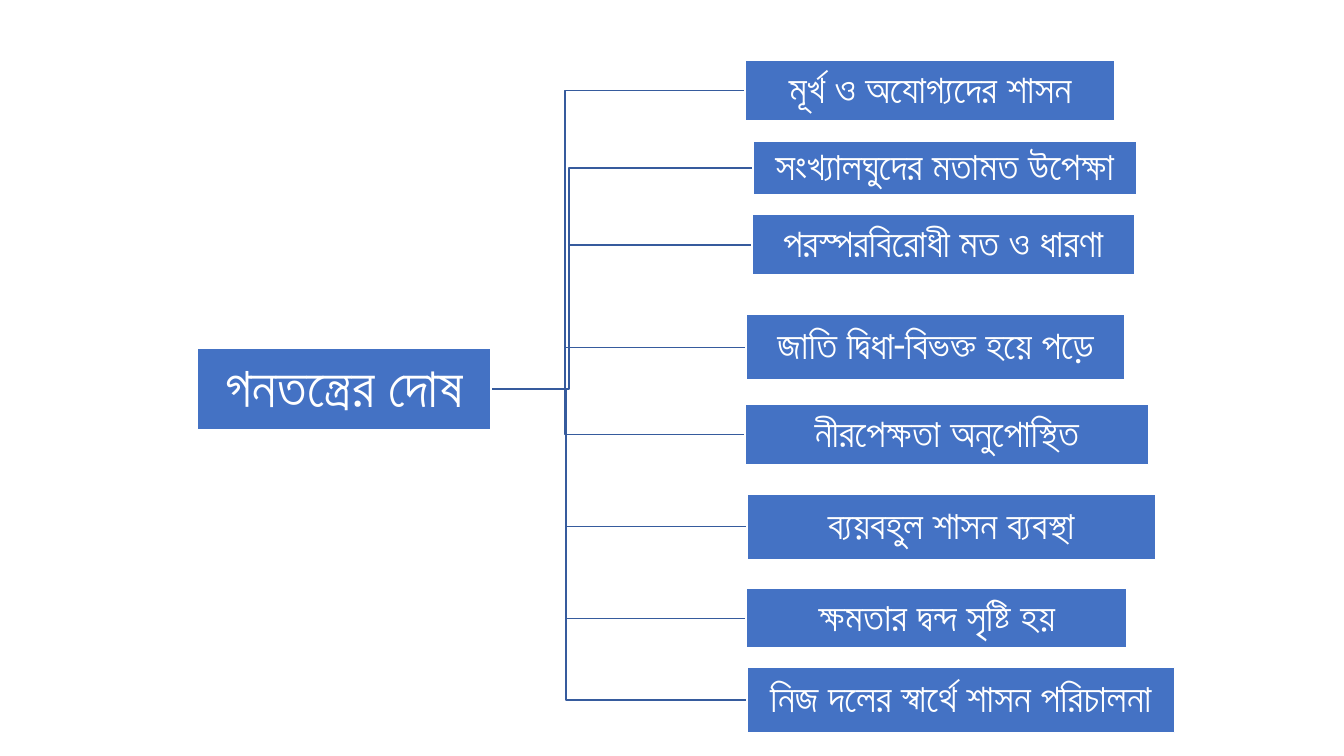
from lxml import etree
from pptx import Presentation
from pptx.dml.color import RGBColor
from pptx.enum import shapes, text
from pptx.oxml import ns
from pptx.util import Inches, Pt

FONT = "Roboto"
BLUE, DARK_BLUE, WHITE = "4472C4", "365B9D", "FFFFFF"
TRUNK_X, TRUNK_Y = 3.82, 3.86

# label, left, top, width, height
FAULTS = [
    ("মূর্খ ও অযোগ্যদের শাসন", 7.39, 0.6, 3.67, 0.6),
    ("সংখ্যালঘুদের মতামত উপেক্ষা", 7.47, 1.4, 3.8, 0.53),
    ("পরস্পরবিরোধী মত ও ধারণা", 7.46, 2.13, 3.79, 0.6),
    ("জাতি দ্বিধা-বিভক্ত হয়ে পড়ে", 7.4, 3.12, 3.76, 0.65),
    ("নীরপেক্ষতা অনুপোস্থিত", 7.39, 4.01, 4, 0.6),
    ("ব্যয়বহুল শাসন ব্যবস্থা", 7.41, 4.9, 4.05, 0.65),
    ("ক্ষমতার দ্বন্দ সৃষ্টি হয়", 7.4, 5.84, 3.78, 0.59),
    ("নিজ দলের স্বার্থে শাসন পরিচালনা", 7.41, 6.62, 4.24, 0.65),
]


def paint(shape, line, fill=None):
    shape.shadow.inherit = False
    if fill:
        shape.fill.solid()
        shape.fill.fore_color.rgb = RGBColor.from_string(fill)
    else:
        shape.fill.background()
    shape.line.color.rgb = RGBColor.from_string(line)
    shape.line.width = Pt(1)


def add_label(label, left, top, width, height, *, size=28, inset=0.02):
    box = page.shapes.add_shape(
        shapes.MSO_SHAPE.RECTANGLE,
        Inches(left), Inches(top), Inches(width), Inches(height))
    paint(box, WHITE, BLUE)
    frame = box.text_frame
    frame.word_wrap = True
    frame.vertical_anchor = text.MSO_ANCHOR.MIDDLE
    frame.margin_left = frame.margin_right = Inches(inset)
    frame.margin_top = frame.margin_bottom = Inches(inset)
    para = frame.paragraphs[0]
    para.alignment = text.PP_ALIGN.CENTER
    para.line_spacing = 0.9
    span = para.add_run()
    span.text = label
    span.font.size = Pt(size)
    span.font.name = FONT
    span.font.color.rgb = RGBColor.from_string(WHITE)
    # Bengali is a complex script, which takes its font from a:cs
    etree.SubElement(span.font._element, ns.qn("a:cs"), typeface=FONT)


deck = Presentation()
deck.slide_width, deck.slide_height = Inches(13.33), Inches(7.5)
page = deck.slides.add_slide(deck.slide_layouts[6])

# Branches bend halfway between the trunk and each box
for _, left, top, _, height in reversed(FAULTS):
    bend_x = Inches((TRUNK_X + left) / 2)
    branch_y = Inches(top + height / 2)
    builder = page.shapes.build_freeform(Inches(TRUNK_X), Inches(TRUNK_Y))
    builder.add_line_segments(
        [(bend_x, Inches(TRUNK_Y)), (bend_x, branch_y), (Inches(left), branch_y)],
        close=False)
    paint(builder.convert_to_shape(), DARK_BLUE)

add_label("গনতন্ত্রের দোষ", 1.96, 3.46, 2.91, 0.8, size=40, inset=0.03)
for fault in FAULTS:
    add_label(*fault)

deck.save("out.pptx")
